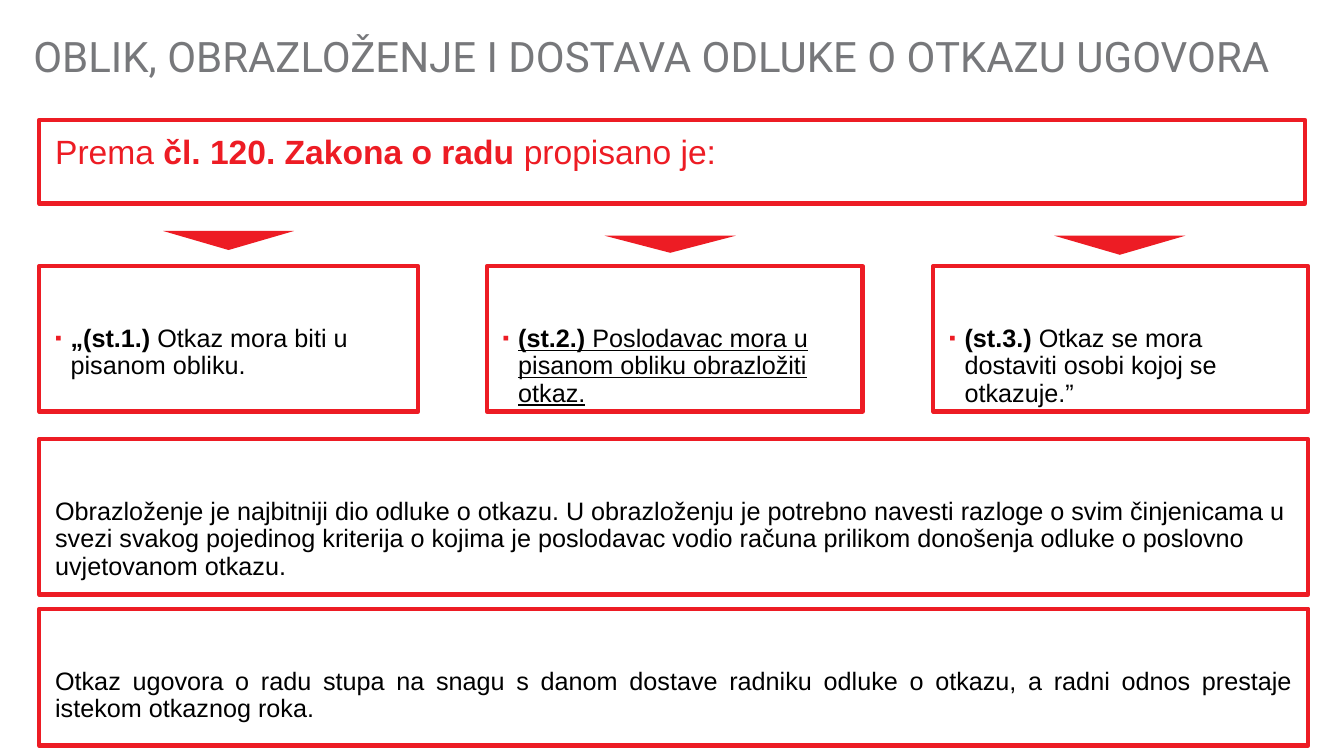
import lxml.etree
import pptx
import pptx.dml.color
import pptx.enum.shapes
import pptx.enum.text
import pptx.oxml.ns
import pptx.util

Cm = pptx.util.Cm
Pt = pptx.util.Pt
ALIGN = pptx.enum.text.PP_ALIGN
SHAPES = pptx.enum.shapes.MSO_SHAPE


def color(value):
    return pptx.dml.color.RGBColor.from_string(value)


class SlideBuilder:
    RED = "ED1C24"
    GRAY = "77787B"
    BLACK = "000000"
    WHITE = "FFFFFF"

    def __init__(self, presentation):
        self.slide = presentation.slides.add_slide(presentation.slide_layouts[5])

    def format_frame(self, frame, side, top, bottom):
        frame.word_wrap = True
        frame.vertical_anchor = pptx.enum.text.MSO_ANCHOR.TOP
        frame.margin_left = frame.margin_right = Cm(side)
        frame.margin_top, frame.margin_bottom = Cm(top), Cm(bottom)

    def format_paragraph(self, paragraph, font_name, size, font_color, align=ALIGN.LEFT):
        paragraph.alignment = align
        paragraph.line_spacing = 0.9
        for run in paragraph.runs:
            run.font.name = font_name
            run.font.size = Pt(size)
            run.font.color.rgb = color(font_color)

    def title(self, text, left, top, width, height):
        shape = self.slide.shapes.title
        shape.left, shape.top, shape.width, shape.height = map(Cm, (left, top, width, height))
        frame = shape.text_frame
        frame.text = text
        self.format_frame(frame, 0, 0, 0)
        frame.auto_size = pptx.enum.text.MSO_AUTO_SIZE.SHAPE_TO_FIT_TEXT
        self.format_paragraph(frame.paragraphs[0], "Roboto", 30, self.GRAY)

    def shape(self, kind, left, top, width, height, fill):
        shape = self.slide.shapes.add_shape(kind, *map(Cm, (left, top, width, height)))
        shape.shadow.inherit = False
        shape.fill.solid()
        shape.fill.fore_color.rgb = color(fill)
        return shape

    def arrow(self, left, top, height):
        shape = self.shape(SHAPES.ISOSCELES_TRIANGLE, left, top, 3.3, height, self.RED)
        shape.rotation = 180
        shape.line.fill.background()

    def box(self, left, top, width, height, parts, size=18, font_color=BLACK,
            inset=1.5, align=ALIGN.LEFT, underline=None):
        shape = self.shape(SHAPES.RECTANGLE, left, top, width, height, self.WHITE)
        shape.line.color.rgb = color(self.RED)
        shape.line.width = Pt(3)
        self.format_frame(shape.text_frame, 0.4, inset, 0.13)
        paragraph = shape.text_frame.paragraphs[0]
        for text, bold in parts:
            run = paragraph.add_run()
            run.text = text
            run.font.bold = bold
            run.font.underline = underline
        self.format_paragraph(paragraph, "Arial", size, font_color, align)
        return paragraph

    def bullet(self, paragraph):
        properties = paragraph._p.get_or_add_pPr()
        properties.set("marL", str(Cm(0.39)))
        properties.set("indent", str(Cm(-0.39)))
        qn = pptx.oxml.ns.qn
        bullet_color = lxml.etree.SubElement(properties, qn("a:buClr"))
        lxml.etree.SubElement(bullet_color, qn("a:srgbClr"), val=self.RED)
        lxml.etree.SubElement(properties, qn("a:buSzPct"), val="75000")
        lxml.etree.SubElement(properties, qn("a:buFont"), typeface="Arial")
        lxml.etree.SubElement(properties, qn("a:buChar"), char="▪")


def main():
    presentation = pptx.Presentation()
    presentation.slide_width = Cm(33.87)
    presentation.slide_height = Cm(19.05)
    builder = SlideBuilder(presentation)
    left = 0.99

    builder.title("OBLIK, OBRAZLOŽENJE I DOSTAVA ODLUKE O OTKAZU UGOVORA",
                  0.84, 0.91, 32.11, 1.14)
    builder.box(left, 3.02, 31.9, 2.11,
                [("Prema ", False), ("čl. 120. Zakona o radu ", True), ("propisano je:", False)],
                size=24, font_color=builder.RED, inset=0.4)

    for arrow_left, arrow_top, arrow_height in (
            (4.11, 5.82, 0.48), (15.24, 5.94, 0.43), (26.57, 5.94, 0.48)):
        builder.arrow(arrow_left, arrow_top, arrow_height)

    rules = (
        (left, 9.55, "„(st.1.) ", "Otkaz mora biti u pisanom obliku.", None),
        (12.27, 9.47, "(st.2.) ", "Poslodavac mora u pisanom obliku obrazložiti otkaz.", True),
        (23.52, 9.45, "(st.3.) ", "Otkaz se mora dostaviti osobi kojoj se otkazuje.”", None),
    )
    for rule_left, width, label, text, underline in rules:
        paragraph = builder.box(rule_left, 6.71, width, 3.66,
                                [(label, True), (text, False)], underline=underline)
        builder.bullet(paragraph)

    explanation = (
        "Obrazloženje je najbitniji dio odluke o otkazu. U obrazloženju je potrebno navesti "
        "razloge o svim činjenicama u svezi svakog pojedinog kriterija o kojima je poslodavac "
        "vodio računa prilikom donošenja odluke o poslovno uvjetovanom otkazu."
    )
    effect = (
        "Otkaz ugovora o radu stupa na snagu s danom dostave radniku odluke o otkazu, "
        "a radni odnos prestaje istekom otkaznog roka."
    )
    builder.box(left, 11.07, 31.98, 3.91, [(explanation, False)])
    builder.box(left, 15.34, 31.98, 3.45, [(effect, False)], align=ALIGN.JUSTIFY)

    presentation.save("out.pptx")


if __name__ == "__main__":
    main()
